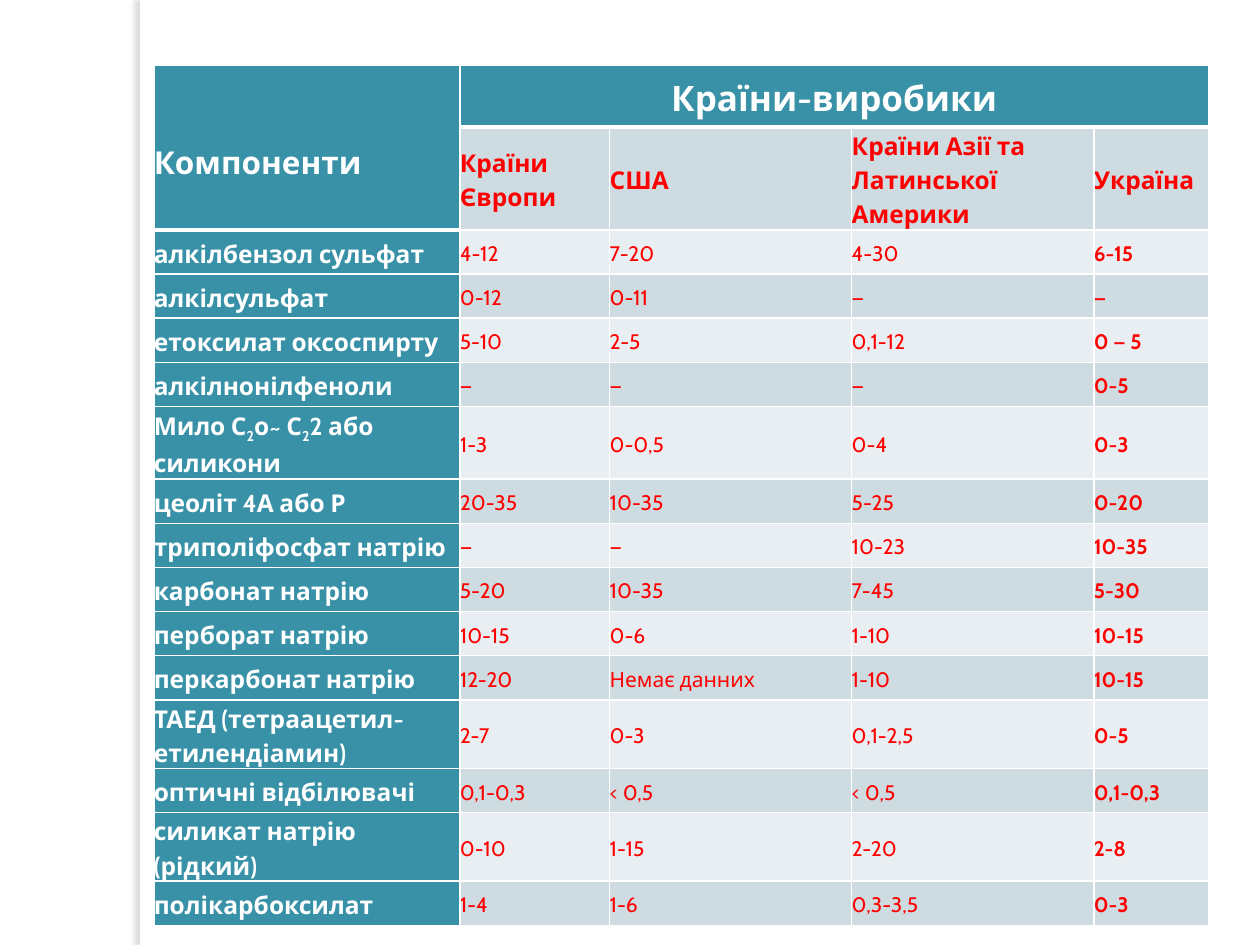
from pptx import Presentation
from pptx.dml.color import RGBColor
from pptx.enum.shapes import MSO_SHAPE as Shape
from pptx.enum.text import MSO_ANCHOR as Anchor, PP_ALIGN as Align
from pptx.oxml import parse_xml
from pptx.oxml.ns import nsdecls
from pptx.util import Cm, Pt

TEAL, WHITE, RED = "3891A7", "FFFFFF", "FF0000"
DARK, LIGHT = "CEDCE1", "E8EEF1"

WIDTHS = [6.17, 3.02, 4.88, 4.88, 2.31]
HEIGHTS = [1.24, 1.85] + [0.89] * 10 + [1.22] + [0.89] * 3

HEADS = ["Країни Європи", "США", "Країни Азії та Латинської Америки", "Україна"]
# Text between bars is set as subscript
ROWS = [
    ["алкілбензол сульфат", "4-12", "7-20", "4-30", "6-15"],
    ["алкілсульфат", "0-12", "0-11", "—", "—"],
    ["етоксилат оксоспирту", "5-10", "2-5", "0,1-12", "0 — 5"],
    ["алкілнонілфеноли", "—", "—", "—", "0-5"],
    ["Мило С|2|о~ С|2|2 або силикони", "1-3", "0-0,5", "0-4", "0-3"],
    ["цеоліт 4А або Р", "20-35", "10-35", "5-25", "0-20"],
    ["триполіфосфат натрію", "—", "—", "10-23", "10-35"],
    ["карбонат натрію", "5-20", "10-35", "7-45", "5-30"],
    ["перборат натрію", "10-15", "0-6", "1-10", "10-15"],
    ["перкарбонат натрію", "12-20", "Немає данних", "1-10", "10-15"],
    ["ТАЕД (тетраацетил-етилендіамин)", "2-7", "0-3", "0,1-2,5", "0-5"],
    ["оптичні відбілювачі", "0,1-0,3", "< 0,5", "< 0,5", "0,1-0,3"],
    ["силикат натрію (рідкий)", "0-10", "1-15", "2-20", "2-8"],
    ["полікарбоксилат", "1-4", "1-6", "0,3-3,5", "0-3"],
]


def color(code):
    return RGBColor.from_string(code)


class Deck:
    font = "Cabin"

    def __init__(self, wide, high):
        self.file = Presentation()
        self.file.slide_width, self.file.slide_height = Cm(wide), Cm(high)
        self.slide = self.file.slides.add_slide(self.file.slide_layouts[6])

    def strip(self, x, y, w, h):
        """White bar that casts a soft shadow to the left."""
        bar = self.slide.shapes.add_shape(Shape.RECTANGLE, Cm(x), Cm(y), Cm(w), Cm(h))
        bar.fill.solid()
        bar.fill.fore_color.rgb = color(WHITE)
        bar.line.fill.background()
        bar.shadow.inherit = False
        bar.element.spPr.remove(bar.element.spPr[-1])
        bar.element.spPr.append(parse_xml(
            f'<a:effectLst {nsdecls("a")}><a:outerShdw blurRad="{Pt(3)}" dist="{Pt(3)}" '
            'dir="10800000" algn="tl" rotWithShape="0"><a:srgbClr val="736F63">'
            '<a:alpha val="25000"/></a:srgbClr></a:outerShdw></a:effectLst>'))

    def table(self, x, y, widths, heights):
        frame = self.slide.shapes.add_table(
            len(heights), len(widths), Cm(x), Cm(y), Cm(sum(widths)), Cm(sum(heights)))
        grid = frame.table
        grid.first_row = grid.horz_banding = False
        for col, w in zip(grid.columns, widths):
            col.width = Cm(w)
        for row, h in zip(grid.rows, heights):
            row.height = Cm(h)
        return grid

    def edges(self, cell, thick=""):
        """White borders, 3 pt on the sides named in thick and 1 pt elsewhere."""
        props = cell._tc.get_or_add_tcPr()
        for spot, side in enumerate("LRTB"):
            width = Pt(3 if side in thick else 1)
            props.insert(spot, parse_xml(
                f'<a:ln{side} {nsdecls("a")} w="{width}"><a:solidFill>'
                f'<a:srgbClr val="{WHITE}"/></a:solidFill></a:ln{side}>'))

    def cell(self, cell, text, fill, ink, size, bold=True, align=Align.LEFT):
        cell.fill.solid()
        cell.fill.fore_color.rgb = color(fill)
        cell.vertical_anchor = Anchor.MIDDLE
        cell.margin_left = cell.margin_right = cell.margin_top = cell.margin_bottom = 0
        para = cell.text_frame.paragraphs[0]
        para.alignment, para.line_spacing = align, 1.15
        font = para.font
        font.name, font.size, font.bold = self.font, Pt(size), bold
        font.color.rgb = color(ink)
        for spot, part in enumerate(text.split("|")):
            run = para.add_run()
            run.text = part
            if spot % 2:
                run._r.get_or_add_rPr().set("baseline", "-25000")
        return para


def main():
    deck = Deck(25.4, 19.05)
    deck.strip(2.82, 0, 0.2, 19.05)
    grid = deck.table(3.1, 1.32, WIDTHS, HEIGHTS)

    # Borders: heavy lines under the header cells
    for r in range(len(HEIGHTS)):
        for c in range(len(WIDTHS)):
            last = 1 if c == 0 else 0
            thick = "B" if r <= last else "T" if r == last + 1 else ""
            deck.edges(grid.cell(r, c), thick)

    # Header
    corner, top = grid.cell(0, 0), grid.cell(0, 1)
    corner.merge(grid.cell(1, 0))
    top.merge(grid.cell(0, 4))
    deck.cell(corner, "Компоненти", TEAL, WHITE, 18)
    corner.margin_top = Cm(0.5)
    para = deck.cell(top, "Країни-виробики", TEAL, WHITE, 20, align=Align.CENTER)
    para.space_after = Pt(10)
    for c, head in enumerate(HEADS, 1):
        deck.cell(grid.cell(1, c), head, DARK, RED, 14)

    # Body: shaded rows, last column in bold
    for r, (name, *shares) in enumerate(ROWS, 2):
        deck.cell(grid.cell(r, 0), name, TEAL, WHITE, 14)
        for c, share in enumerate(shares, 1):
            deck.cell(grid.cell(r, c), share, DARK if r % 2 else LIGHT, RED, 12, c == 4)

    deck.file.save("out.pptx")


if __name__ == "__main__":
    main()
